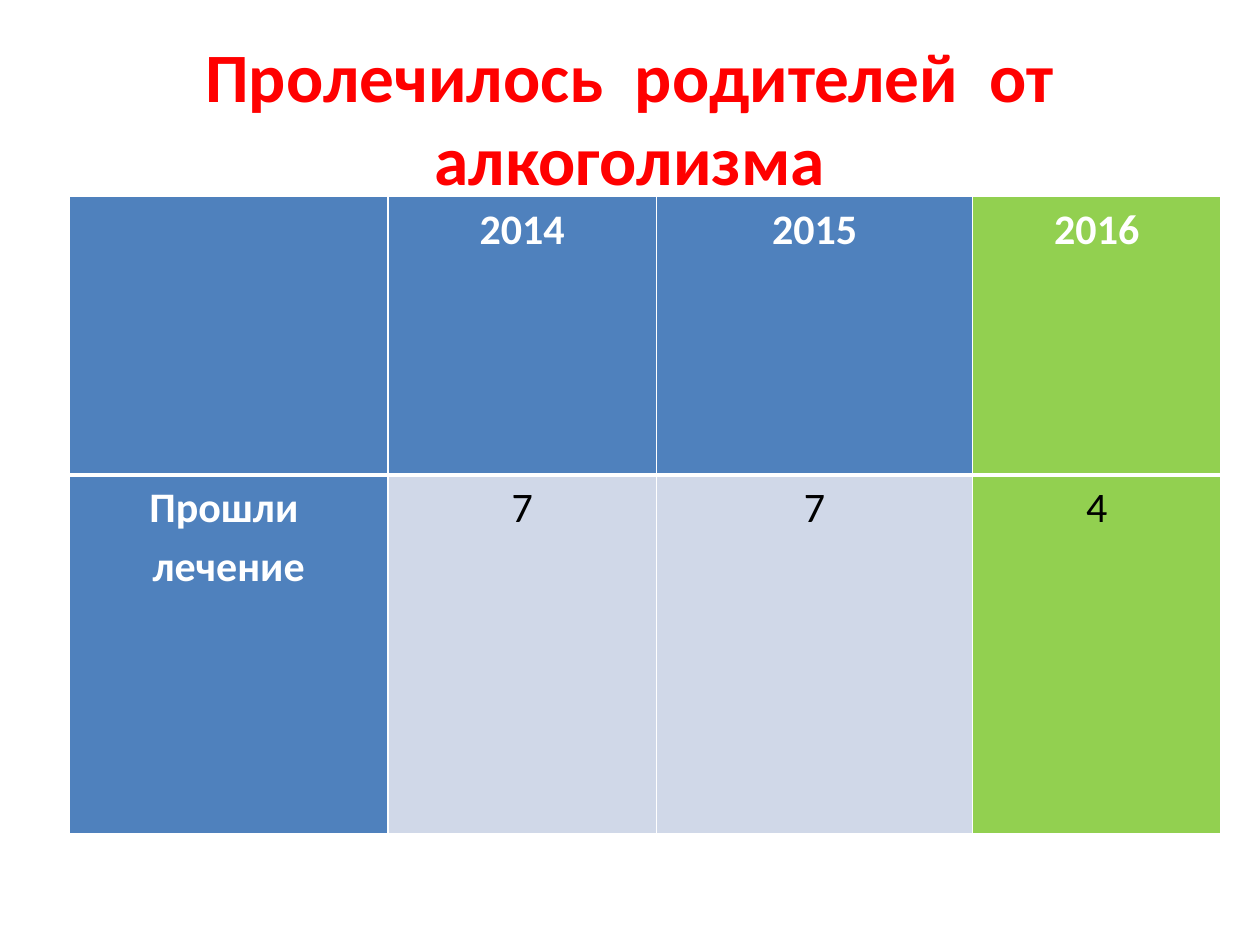
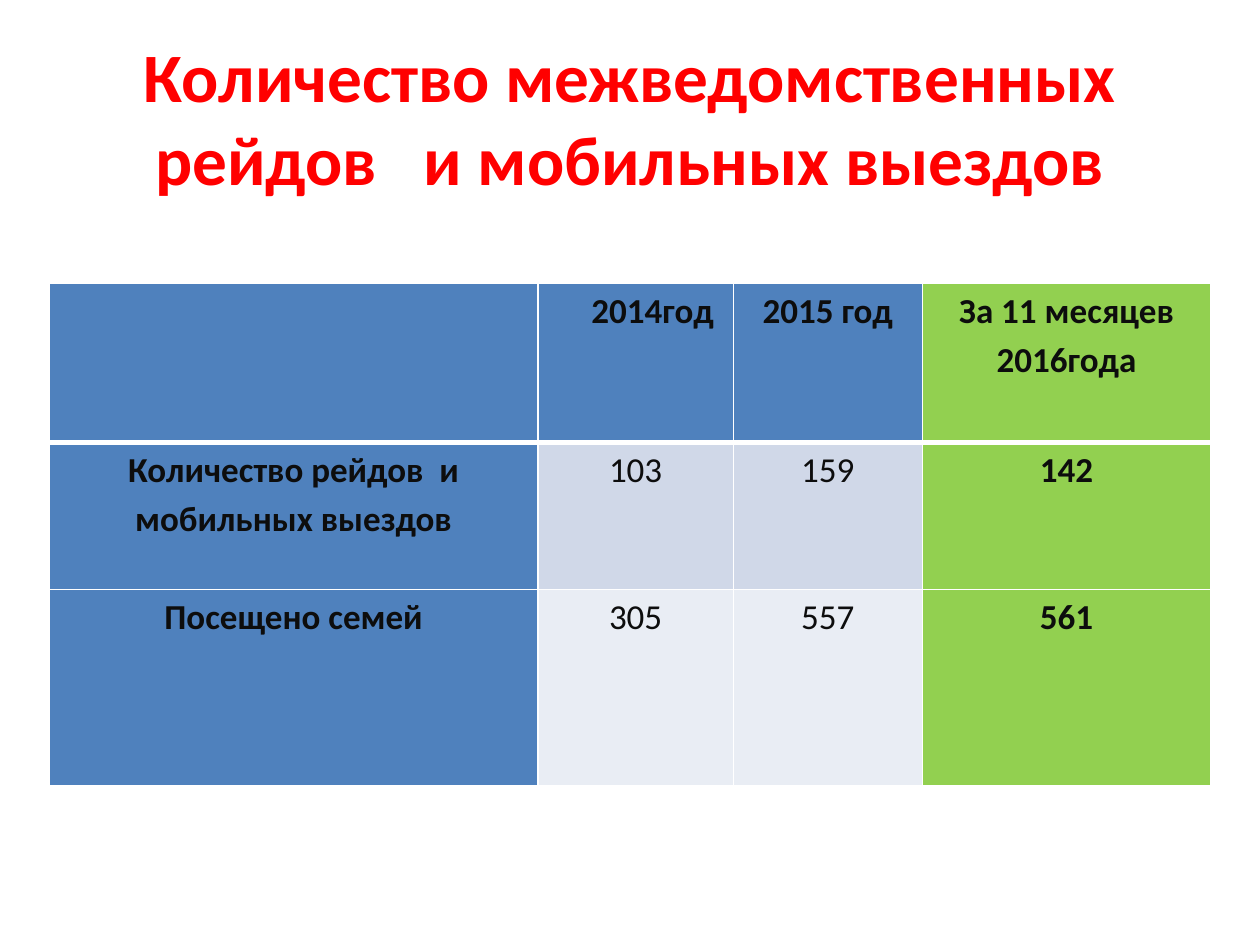
from lxml import etree
from pptx import Presentation
from pptx.dml.color import RGBColor
from pptx.enum.text import MSO_ANCHOR, MSO_AUTO_SIZE, PP_ALIGN
from pptx.oxml.ns import qn
from pptx.util import Inches, Pt

CENTER = PP_ALIGN.CENTER
MIDDLE = MSO_ANCHOR.MIDDLE
NO_AUTOFIT = MSO_AUTO_SIZE.NONE

FONT = "Calibri"
RED, BLUE, GREEN, WHITE = "FF0000", "4F81BD", "92D050", "FFFFFF"
BLACK, NEAR_BLACK = "000000", "0D0D0D"
BANDS = ["D0D8E8", "E9EDF4"]
TITLE_ONLY = 5


def color(hex_string):
    return RGBColor.from_string(hex_string)


def format_paragraph(paragraph, size, font_color, bold):
    paragraph.alignment = CENTER
    for run in paragraph.runs:
        run.font.name = FONT
        run.font.size = Pt(size)
        run.font.bold = bold
        run.font.color.rgb = color(font_color)


def add_title(slide, text, left, top, width, height):
    title = slide.shapes.title
    title.left, title.top = Inches(left), Inches(top)
    title.width, title.height = Inches(width), Inches(height)
    frame = title.text_frame
    frame.text = text
    frame.auto_size = NO_AUTOFIT
    frame.vertical_anchor = MIDDLE
    format_paragraph(frame.paragraphs[0], 39.6, RED, True)


def set_borders(cell, top, bottom):
    """White cell borders; the sides are always one point wide."""
    properties = cell._tc.get_or_add_tcPr()
    widths = {"a:lnL": 1, "a:lnR": 1, "a:lnT": top, "a:lnB": bottom}
    for position, (tag, width) in enumerate(widths.items()):
        line = etree.Element(qn(tag), w=str(Pt(width)))
        fill = etree.SubElement(line, qn("a:solidFill"))
        etree.SubElement(fill, qn("a:srgbClr"), val=WHITE)
        properties.insert(position, line)


def add_year_table(slide, left, top, columns, heights, rows, size,
                   label_color, value_color, bold_last):
    """Blue header row and label column, banded values, green last column."""
    table = slide.shapes.add_table(
        len(rows), len(columns), Inches(left), Inches(top),
        Inches(sum(columns)), Inches(sum(heights))).table
    for column, width in zip(table.columns, columns):
        column.width = Inches(width)
    for row, height in zip(table.rows, heights):
        row.height = Inches(height)

    last = len(columns) - 1
    for row_index, texts in enumerate(rows):
        for column_index, text in enumerate(texts):
            cell = table.cell(row_index, column_index)
            is_label = row_index == 0 or column_index == 0
            if column_index == last:
                fill = GREEN
            elif is_label:
                fill = BLUE
            else:
                fill = BANDS[(row_index - 1) % 2]
            cell.fill.solid()
            cell.fill.fore_color.rgb = color(fill)
            cell.margin_left = cell.margin_right = Inches(0.07)
            cell.margin_top = cell.margin_bottom = 0
            set_borders(cell, 3 if row_index == 1 else 1,
                        3 if row_index == 0 else 1)
            cell.text_frame.text = text
            paragraph = cell.text_frame.paragraphs[0]
            paragraph.line_spacing = 1.15
            format_paragraph(paragraph, size,
                             label_color if is_label else value_color,
                             is_label or (bold_last and column_index == last))
    return table


def add_table_slide(presentation, title):
    slide = presentation.slides.add_slide(
        presentation.slide_layouts[TITLE_ONLY])
    add_title(slide, title, 0.5, 0.3, 9, 1.25)
    return slide


def build_treatment_slide(presentation):
    slide = add_table_slide(presentation,
                            "Пролечилось  родителей  от алкоголизма")
    add_year_table(
        slide, 0.55, 1.56, [2.53, 2.13, 2.51, 1.97], [2.21, 2.85],
        [["", "2014", "2015", "2016"],
         ["Прошли  лечение", "7", "7", "4"]],
        24, WHITE, BLACK, bold_last=False)


def build_raids_slide(presentation):
    slide = add_table_slide(
        presentation,
        "Количество межведомственных рейдов   и мобильных выездов")
    table = add_year_table(
        slide, 0.39, 2.25, [3.88, 1.55, 1.5, 2.29], [1.26, 1.17, 1.56],
        [["", "2014год", "2015 год", "За 11 месяцев 2016года"],
         ["Количество рейдов  и мобильных выездов", "103", "159", "142"],
         ["Посещено семей", "305", "557", "561"]],
        20, NEAR_BLACK, NEAR_BLACK, bold_last=True)
    # The first year heading is indented
    heading = table.cell(0, 1).text_frame.paragraphs[0]
    heading._p.get_or_add_pPr().set("marL", str(Inches(0.27)))


def main():
    presentation = Presentation()
    presentation.slide_width = Inches(10)
    presentation.slide_height = Inches(7.5)
    build_treatment_slide(presentation)
    build_raids_slide(presentation)
    presentation.save("out.pptx")


if __name__ == "__main__":
    main()
